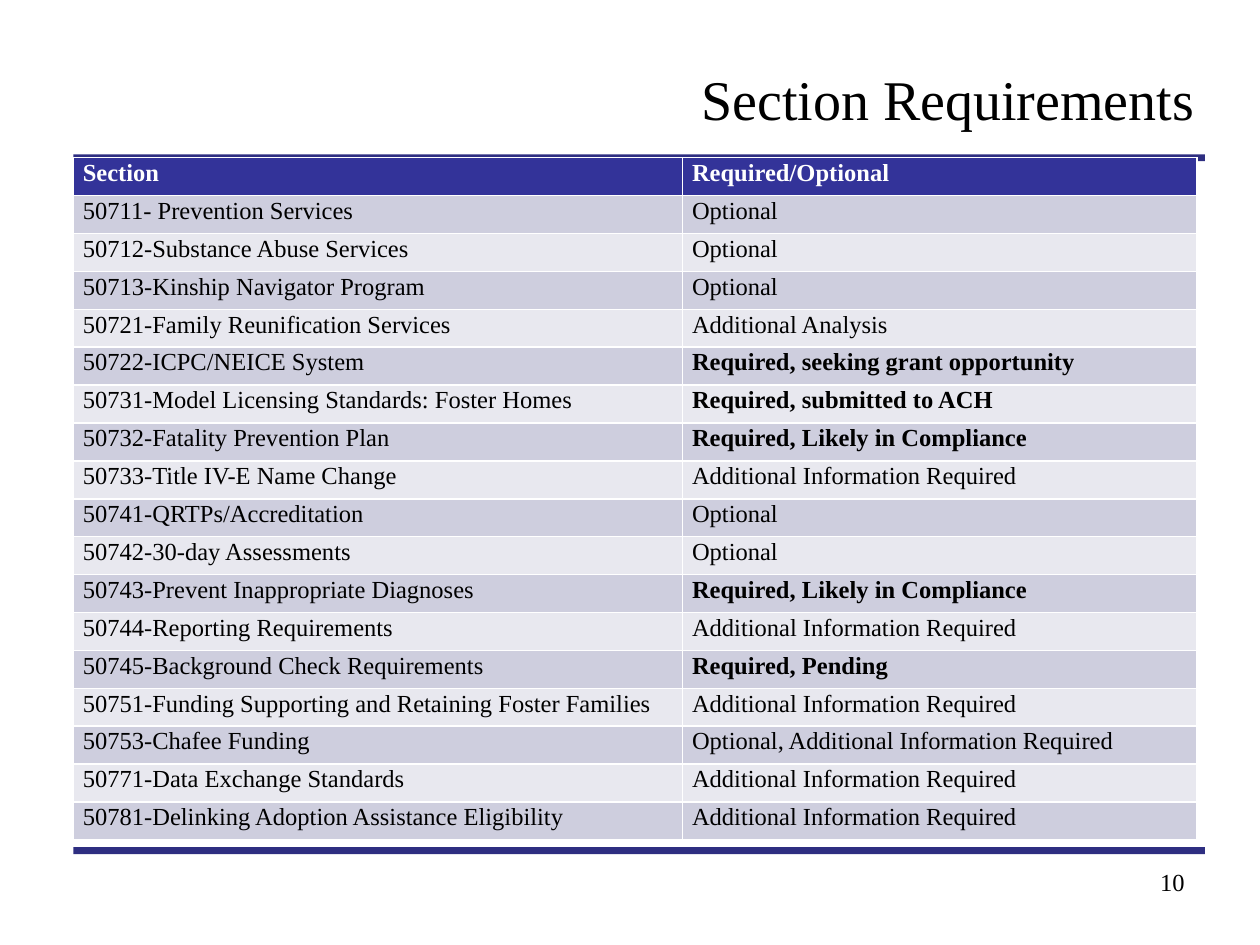
from dataclasses import dataclass

from lxml.etree import SubElement
from pptx import Presentation
from pptx.dml.color import RGBColor
from pptx.enum.shapes import MSO_CONNECTOR
from pptx.enum.text import MSO_ANCHOR, PP_ALIGN
from pptx.oxml.ns import qn
from pptx.util import Cm, Pt


@dataclass(frozen=True)
class Theme:
    font: str = "Times New Roman"
    text: str = "000000"
    header_text: str = "FFFFFF"
    header_fill: str = "333399"
    bands: tuple = ("CECEDE", "E8E8EF")
    rule: str = "000066"
    rule_opacity: int = 82
    rule_width: int = 4
    title_size: int = 32
    body_size: int = 14


SECTIONS = [
    ("50711- Prevention Services", "Optional"),
    ("50712-Substance Abuse Services", "Optional"),
    ("50713-Kinship Navigator Program", "Optional"),
    ("50721-Family Reunification Services", "Additional Analysis"),
    ("50722-ICPC/NEICE System", "Required, seeking grant opportunity"),
    ("50731-Model Licensing Standards: Foster Homes", "Required, submitted to ACH"),
    ("50732-Fatality Prevention Plan", "Required, Likely in Compliance"),
    ("50733-Title IV-E Name Change", "Additional Information Required"),
    ("50741-QRTPs/Accreditation", "Optional"),
    ("50742-30-day Assessments", "Optional"),
    ("50743-Prevent Inappropriate Diagnoses", "Required, Likely in Compliance"),
    ("50744-Reporting Requirements", "Additional Information Required"),
    ("50745-Background Check Requirements", "Required, Pending"),
    ("50751-Funding Supporting and Retaining Foster Families", "Additional Information Required"),
    ("50753-Chafee Funding", "Optional, Additional Information Required"),
    ("50771-Data Exchange Standards", "Additional Information Required"),
    ("50781-Delinking Adoption Assistance Eligibility", "Additional Information Required"),
]


class SlideBuilder:
    def __init__(self, slide, theme):
        self.slide = slide
        self.theme = theme

    def format_paragraph(self, paragraph, size, color, bold=False, align=PP_ALIGN.LEFT):
        paragraph.alignment = align
        font = paragraph.font
        font.name = self.theme.font
        font.size = Pt(size)
        font.bold = bold
        font.color.rgb = RGBColor.from_string(color)

    def title(self, text, left, top, width, height):
        shape = self.slide.shapes.title
        shape.left, shape.top, shape.width, shape.height = map(Cm, (left, top, width, height))
        shape.text_frame.text = text
        shape.text_frame.vertical_anchor = MSO_ANCHOR.MIDDLE
        self.format_paragraph(shape.text_frame.paragraphs[0], self.theme.title_size,
                              self.theme.text, align=PP_ALIGN.RIGHT)

    def rule(self, left, right, y):
        """Draw a translucent horizontal line."""
        connector = self.slide.shapes.add_connector(
            MSO_CONNECTOR.STRAIGHT, Cm(left), Cm(y), Cm(right), Cm(y))
        connector.line.width = Pt(self.theme.rule_width)
        connector.line.color.rgb = RGBColor.from_string(self.theme.rule)
        properties = connector.element.spPr
        color = next(properties.iter(qn("a:srgbClr")))
        SubElement(color, qn("a:alpha")).set("val", str(self.theme.rule_opacity * 1000))
        SubElement(properties, qn("a:effectLst"))

    def page_number(self, text, left, top, width, height):
        box = self.slide.shapes.add_textbox(*map(Cm, (left, top, width, height)))
        box.text_frame.word_wrap = True
        box.text_frame.text = text
        self.format_paragraph(box.text_frame.paragraphs[0], self.theme.body_size,
                              self.theme.text, align=PP_ALIGN.RIGHT)

    def cell(self, cell, text, fill, color, bold):
        cell.margin_left = cell.margin_right = Cm(0.19)
        cell.margin_top = cell.margin_bottom = 0
        cell.fill.solid()
        cell.fill.fore_color.rgb = RGBColor.from_string(fill)
        cell.text = text
        paragraph = cell.text_frame.paragraphs[0]
        paragraph.line_spacing = 1.07
        paragraph.space_after = Pt(8)
        self.format_paragraph(paragraph, self.theme.body_size, color, bold)

    def table(self, header, rows, left, top, column_widths, height):
        """Fill a banded table, with every "Required" status in bold."""
        theme = self.theme
        table = self.slide.shapes.add_table(
            len(rows) + 1, len(header), Cm(left), Cm(top),
            Cm(sum(column_widths)), Cm(height)).table
        for column, width in zip(table.columns, column_widths):
            column.width = Cm(width)
        for cell, text in zip(table.rows[0].cells, header):
            self.cell(cell, text, theme.header_fill, theme.header_text, True)
        for index, values in enumerate(rows):
            fill = theme.bands[index % 2]
            for cell, text in zip(table.rows[index + 1].cells, values):
                self.cell(cell, text, fill, theme.text, text.startswith("Required"))


def main():
    presentation = Presentation()
    presentation.slide_width = Cm(25.4)
    presentation.slide_height = Cm(19.05)
    title_only = presentation.slide_layouts[5]
    builder = SlideBuilder(presentation.slides.add_slide(title_only), Theme())

    for y in (17.15, 3.18):
        builder.rule(1.48, 24.29, y)
    builder.title("Section Requirements", 7.2, 0.76, 17.14, 2.42)
    builder.page_number("10", 18.2, 17.36, 5.93, 1.32)
    builder.table(("Section", "Required/Optional"), SECTIONS,
                  1.48, 3.18, (12.28, 10.37), 13.76)
    presentation.save("out.pptx")


if __name__ == "__main__":
    main()
